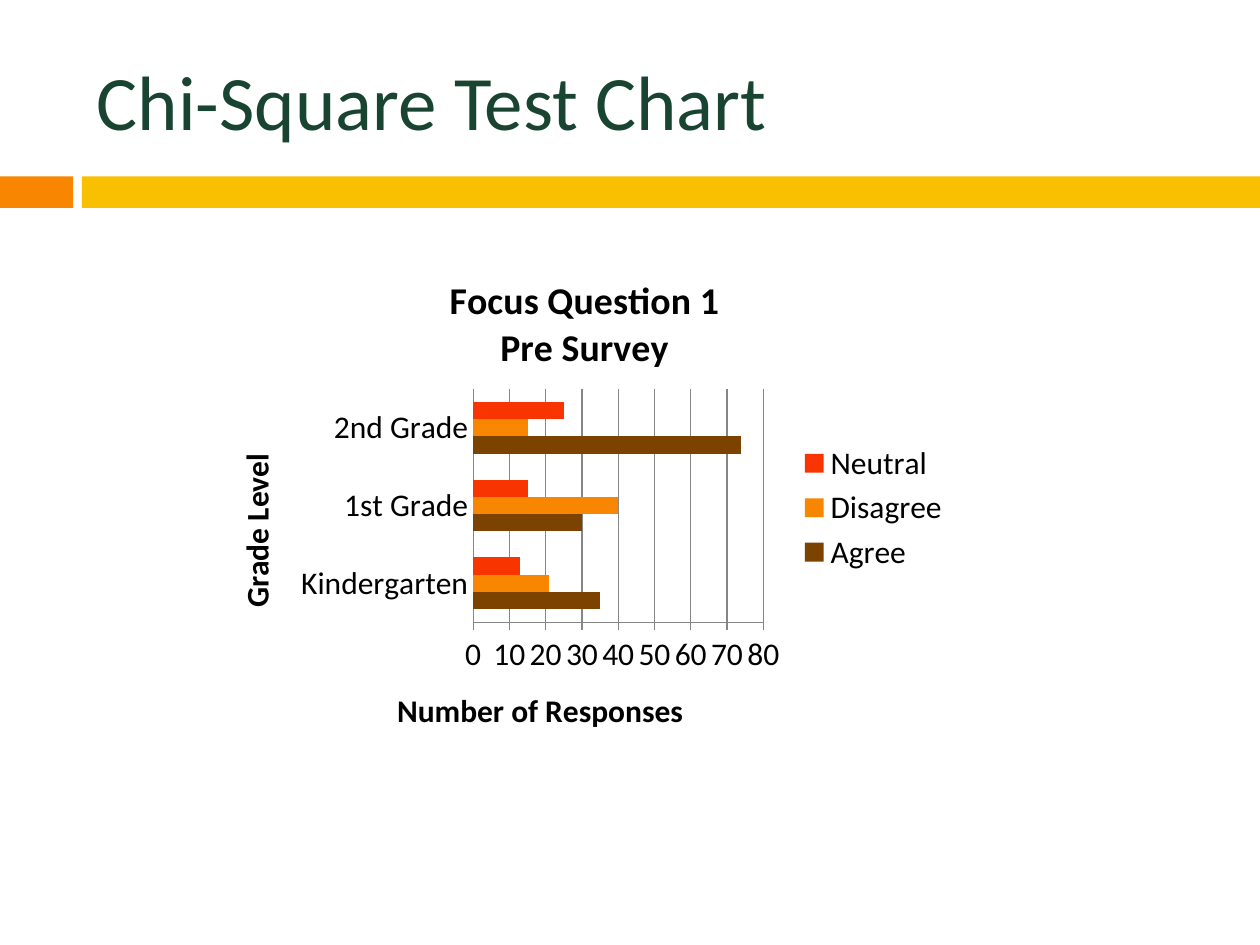
import pptx
import pptx.chart.data
import pptx.dml.color
import pptx.enum.chart
import pptx.enum.shapes
import pptx.enum.text
import pptx.util

RGB = pptx.dml.color.RGBColor
Pt = pptx.util.Pt
GREEN = RGB(0x19, 0x44, 0x31)
ORANGE = RGB(0xF8, 0x86, 0x00)
GOLD = RGB(0xF8, 0xC0, 0x00)
BROWN = RGB(0x7C, 0x43, 0x00)
RED = RGB(0xF8, 0x35, 0x00)
GRAY = RGB(0x86, 0x86, 0x86)
BLACK = RGB(0, 0, 0)
FONT = "Calibri"

deck = pptx.Presentation()
deck.slide_width = pptx.util.Inches(10)
deck.slide_height = pptx.util.Inches(7.5)
slide = deck.slides.add_slide(deck.slide_layouts[6])


def area(left, top, width, height):
    """Turn shares of the slide's size into lengths."""
    wide, high = deck.slide_width, deck.slide_height
    return int(left * wide), int(top * high), int(width * wide), int(height * high)


def style(font, size, color, bold=False):
    font.name = FONT
    font.size = Pt(size)
    font.bold = bold
    font.color.rgb = color


# Two-part band under the title
for left, width, color in ((0, 0.058, ORANGE), (0.065, 0.935, GOLD)):
    band = slide.shapes.add_shape(
        pptx.enum.shapes.MSO_SHAPE.RECTANGLE, *area(left, 1.4 / 7.5, width, 0.25 / 7.5))
    band.shadow.inherit = False
    band.fill.solid()
    band.fill.fore_color.rgb = color
    band.line.fill.background()

# Slide title
title = slide.shapes.add_textbox(*area(0.067, 0.25 / 7.5, 0.892, 1.08 / 7.5))
frame = title.text_frame
frame.word_wrap = True
frame.vertical_anchor = pptx.enum.text.MSO_ANCHOR.MIDDLE
frame.text = "Chi-Square Test Chart"
style(frame.paragraphs[0].runs[0].font, 44, GREEN)

# Survey chart
answers = (
    ("Agree", (35, 30, 74), BROWN),
    ("Disagree", (21, 40, 15), ORANGE),
    ("Neutral", (13, 15, 25), RED),
)
data = pptx.chart.data.CategoryChartData()
data.categories = ("Kindergarten", "1st Grade", "2nd Grade")
for name, counts, color in answers:
    data.add_series(name, counts)
chart = slide.shapes.add_chart(
    pptx.enum.chart.XL_CHART_TYPE.BAR_CLUSTERED,
    *area(0.164, 2.02 / 7.5, 0.6, 4.02 / 7.5), data).chart
style(chart.font, 18, BLACK)

plot = chart.plots[0]
plot.gap_width = 150
plot.vary_by_categories = False
for series, (name, counts, color) in zip(plot.series, answers):
    series.format.fill.solid()
    series.format.fill.fore_color.rgb = color

chart.has_legend = True
chart.legend.position = pptx.enum.chart.XL_LEGEND_POSITION.RIGHT
chart.legend.include_in_layout = False

grades, scale = chart.category_axis, chart.value_axis
marks = pptx.enum.chart.XL_TICK_MARK
grades.major_tick_mark = marks.NONE
scale.major_tick_mark = marks.OUTSIDE
scale.has_major_gridlines = True
for line in (grades.format.line, scale.format.line, scale.major_gridlines.format.line):
    line.color.rgb = GRAY
    line.width = Pt(0.75)

for owner, text, size in (
    (chart, "Focus Question 1\nPre Survey", 21.6),
    (grades, "Grade Level", 18),
    (scale, "Number of Responses", 18),
):
    owner.has_title = True
    head = (owner.chart_title if owner is chart else owner.axis_title).text_frame
    head.text = text
    for para in head.paragraphs:
        style(para.font, size, BLACK, True)
        style(para.runs[0].font, size, BLACK, True)

deck.save("out.pptx")
